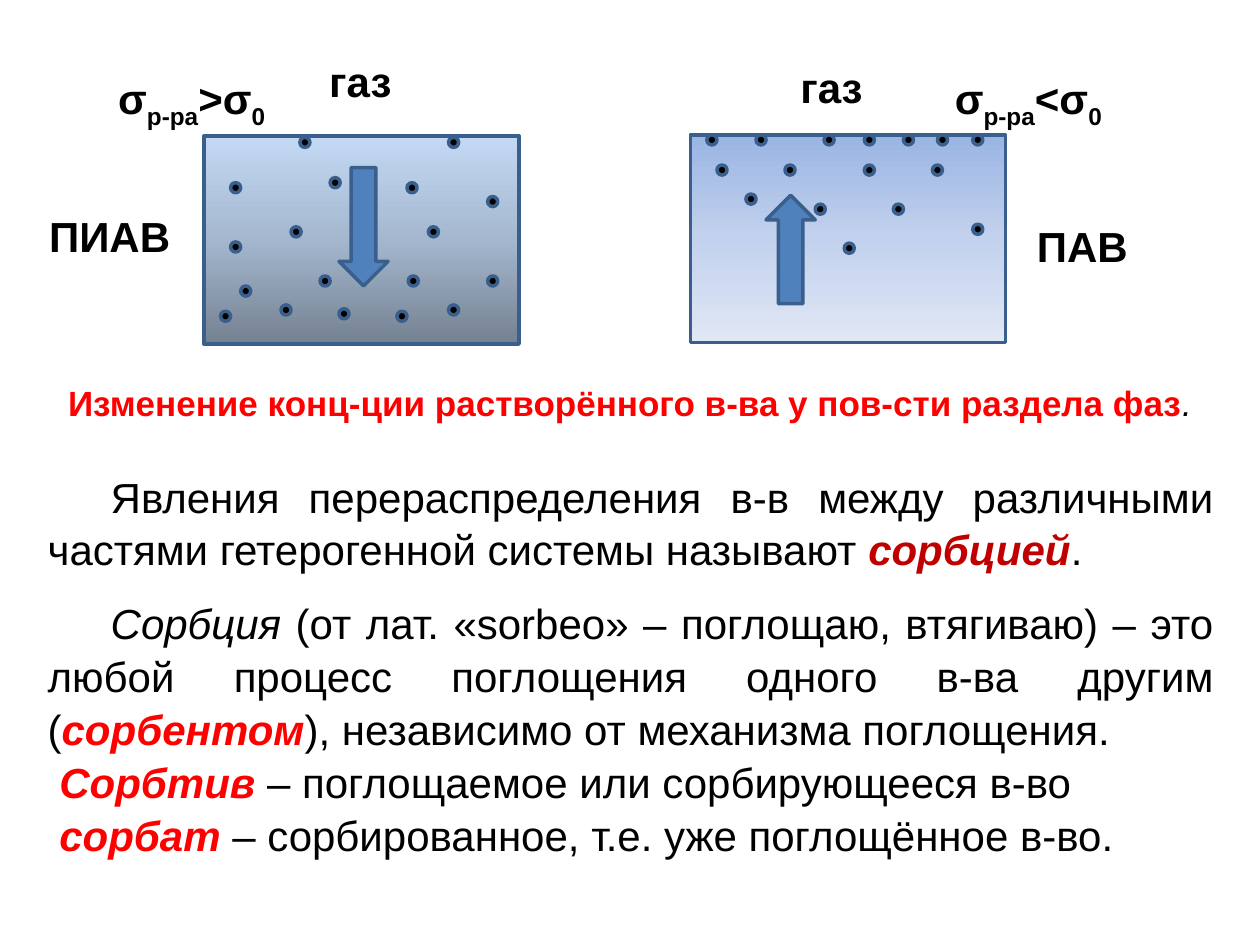
from copy import deepcopy

from pptx import Presentation
from pptx.dml.color import RGBColor
from pptx.enum.shapes import MSO_SHAPE
from pptx.enum.text import MSO_AUTO_SIZE, PP_ALIGN
from pptx.util import Inches, Pt

RECTANGLE = MSO_SHAPE.ROUNDED_RECTANGLE
DOT = MSO_SHAPE.OVAL
DOWN_ARROW = MSO_SHAPE.DOWN_ARROW
UP_ARROW = MSO_SHAPE.UP_ARROW
FIT_SHAPE = MSO_AUTO_SIZE.SHAPE_TO_FIT_TEXT
LEFT, CENTER, JUSTIFY = PP_ALIGN.LEFT, PP_ALIGN.CENTER, PP_ALIGN.JUSTIFY

BLACK = RGBColor(0x00, 0x00, 0x00)
RED = RGBColor(0xFF, 0x00, 0x00)
DARK_RED = RGBColor(0xC0, 0x00, 0x00)
BLUE = RGBColor(0x4F, 0x81, 0xBD)
OUTLINE = RGBColor(0x3A, 0x5F, 0x8C)
PAV_COLORS = [RGBColor(0x9A, 0xB5, 0xE4), RGBColor(0xC2, 0xD1, 0xED),
              RGBColor(0xE1, 0xE8, 0xF5)]
PIAV_COLORS = [RGBColor(0x74, 0x81, 0x91), RGBColor(0xA4, 0xB7, 0xCE),
               RGBColor(0xC3, 0xD9, 0xF4)]

# Run styles
PLAIN = {}
BOLD = {"bold": True}
SUBSCRIPT = {"bold": True, "baseline": -25}
ITALIC = {"italic": True}
TERM = {"bold": True, "italic": True, "color": RED}
MAIN_TERM = {**TERM, "color": DARK_RED}
HEADING = {"bold": True, "color": RED}

# Dissolved particles: row top -> left edges, in inches
PIAV_PARTICLES = {
    1.09: [2.38, 3.56], 1.41: [2.62], 1.45: [1.83, 3.23], 1.56: [3.87],
    1.8: [2.31, 3.4], 1.92: [1.83], 2.19: [2.54, 3.24, 3.87], 2.27: [1.91],
    2.42: [2.23, 3.56], 2.45: [2.69], 2.47: [1.75, 3.15],
}
PAV_PARTICLES = {
    1.07: [5.61, 6, 6.54, 6.86, 7.17, 7.44, 7.72],
    1.31: [5.69, 6.23, 6.86, 7.4], 1.54: [5.92], 1.62: [6.47, 7.09],
    1.78: [7.72], 1.93: [6.7],
}


class SlideBuilder:
    font = "Arial"
    line_width = Pt(2)
    dot_size = 0.08

    def __init__(self, slide):
        self.slide = slide

    def shape(self, kind, left, top, width, height, color=None):
        shape = self.slide.shapes.add_shape(
            kind, Inches(left), Inches(top), Inches(width), Inches(height))
        shape.shadow.inherit = False
        shape.line.color.rgb = OUTLINE
        shape.line.width = self.line_width
        if color is not None:
            shape.fill.solid()
            shape.fill.fore_color.rgb = color
        return shape

    def vessel(self, left, top, colors, angle):
        vessel = self.shape(RECTANGLE, left, top, 2.5, 1.65)
        vessel.adjustments[0] = 0
        vessel.fill.gradient()
        vessel.fill.gradient_angle = angle
        # The default gradient has two stops; add the middle one
        first = vessel.fill._fill._gradFill.gsLst[0]
        first.addnext(deepcopy(first))
        for stop, position, color in zip(vessel.fill.gradient_stops, (0, 0.5, 1), colors):
            stop.position = position
            stop.color.rgb = color

    def particles(self, rows):
        for top, lefts in rows.items():
            for left in lefts:
                self.shape(DOT, left, top, self.dot_size, self.dot_size, BLACK)

    def text(self, left, top, width, height, paragraphs, size=24, align=CENTER,
             wrap=True, line_spacing=None):
        """Each paragraph is (runs, first-line indent, space after)."""
        box = self.slide.shapes.add_textbox(
            Inches(left), Inches(top), Inches(width), Inches(height))
        frame = box.text_frame
        frame.word_wrap = wrap
        frame.auto_size = FIT_SHAPE
        for index, (runs, indent, space_after) in enumerate(paragraphs):
            paragraph = frame.add_paragraph() if index else frame.paragraphs[0]
            paragraph.alignment = align
            paragraph.space_after = Pt(space_after)
            if line_spacing:
                paragraph.line_spacing = line_spacing
            if indent:
                paragraph._p.get_or_add_pPr().set("indent", str(Inches(indent)))
            for words, style in runs:
                self.run(paragraph, words, size, style)

    def run(self, paragraph, words, size, style):
        run = paragraph.add_run()
        run.text = words
        run.font.name = self.font
        run.font.size = Pt(size)
        run.font.bold = style.get("bold", False)
        run.font.italic = style.get("italic", False)
        run.font.color.rgb = style.get("color", BLACK)
        if "baseline" in style:
            run.font._element.set("baseline", str(style["baseline"] * 1000))

    def label(self, words, left, top, width):
        self.text(left, top, width, 0.5, [([(words, BOLD)], 0, 0)])

    def tension(self, sign, left):
        runs = [("σ", BOLD), ("р-ра", SUBSCRIPT), (f"{sign}σ", BOLD), ("0", SUBSCRIPT)]
        self.text(left, 0.53, 1.46, 0.5, [(runs, 0, 0)], align=LEFT, wrap=False)


def main():
    prs = Presentation()
    prs.slide_width, prs.slide_height = Inches(10), Inches(7.5)
    page = SlideBuilder(prs.slides.add_slide(prs.slide_layouts[6]))

    # Vessels with particles
    page.vessel(5.48, 1.07, PAV_COLORS, 270)
    page.vessel(1.62, 1.08, PIAV_COLORS, 90)
    page.particles(PAV_PARTICLES)
    page.particles(PIAV_PARTICLES)

    # Labels and surface tension
    page.label("ПАВ", 8.08, 1.7, 1.02)
    page.label("ПИАВ", 0.28, 1.62, 1.18)
    page.tension(">", 0.84)
    page.tension("<", 7.48)

    # Direction of particle movement
    page.shape(DOWN_ARROW, 2.69, 1.33, 0.39, 0.94, BLUE)
    page.shape(UP_ARROW, 6.08, 1.55, 0.39, 0.86, BLUE)

    # Heading
    heading = [("Изменение конц-ции растворённого в-ва у пов-сти раздела фаз", HEADING),
               (".", ITALIC)]
    page.text(0.31, 2.98, 9.38, 0.44, [(heading, 0, 0)], size=20)

    # Definitions
    phenomenon = [
        ("Явления перераспределения в-в между различными частями "
         "гетерогенной системы называют ", PLAIN),
        ("сорбцией", MAIN_TERM), (". ", PLAIN)]
    sorption = [
        ("Сорбция", ITALIC),
        (" (от лат. «sorbeo» – поглощаю, втягиваю) – это любой процесс "
         "поглощения одного в-ва другим (", PLAIN),
        ("сорбентом", TERM), ("), независимо от механизма поглощения.", PLAIN)]
    sorptive = [(" ", PLAIN), ("Сорбтив ", TERM),
                ("– поглощаемое или сорбирующееся в-во", PLAIN)]
    sorbate = [(" ", PLAIN), ("сорбат", TERM),
               (" – сорбированное, т.е. уже поглощённое в-во. ", PLAIN)]
    page.text(0.28, 3.67, 9.45, 3.1,
              [(phenomenon, 0.5, 12), (sorption, 0.5, 0), (sorptive, 0, 0), (sorbate, 0, 0)],
              align=JUSTIFY, line_spacing=1.05)

    # Gas phase above each vessel
    page.label("газ", 2.27, 0.39, 1.18)
    page.label("газ", 6.01, 0.44, 1.18)

    prs.save("out.pptx")


if __name__ == "__main__":
    main()
